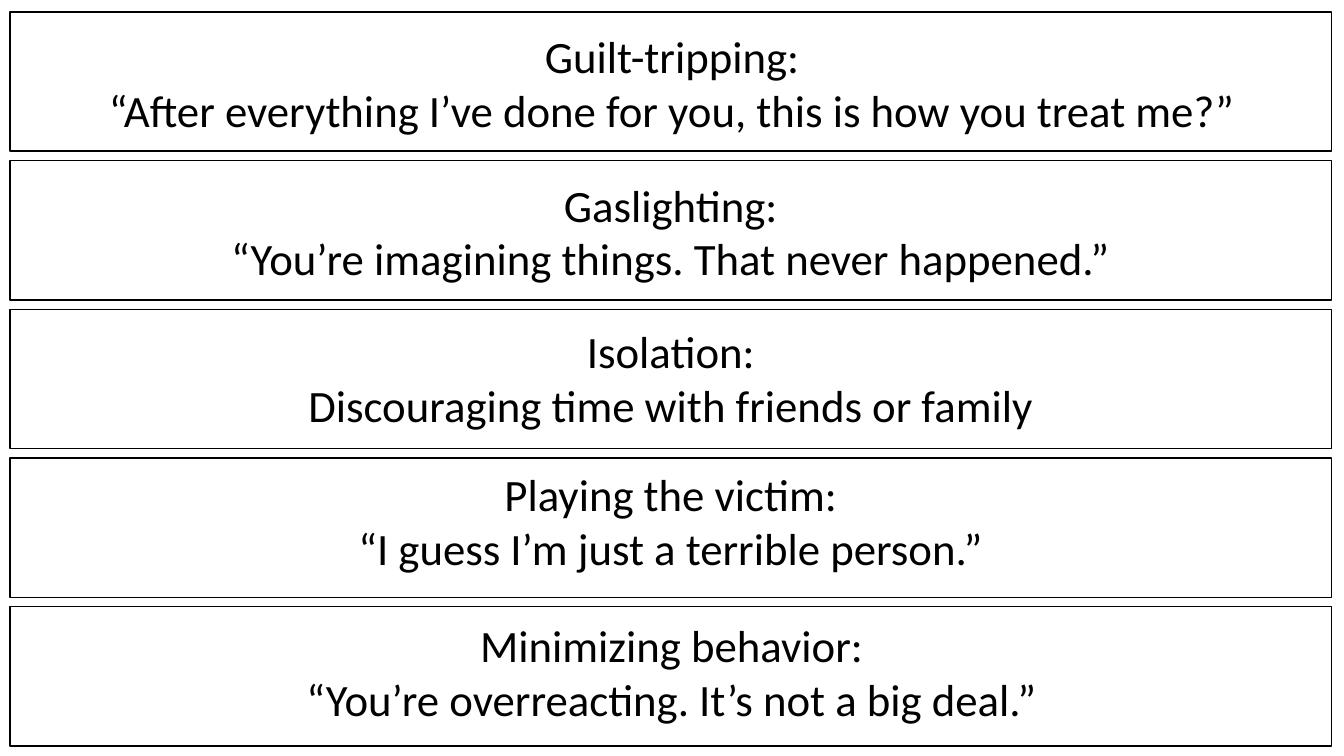
from dataclasses import dataclass

from pptx import Presentation
from pptx.dml.color import RGBColor
from pptx.enum.shapes import MSO_SHAPE
from pptx.enum.text import MSO_AUTO_SIZE, PP_ALIGN
from pptx.util import Pt


@dataclass(frozen=True)
class Theme:
    font: str = "Calibri"
    text_size: float = 32
    line_width: float = 1
    ink: RGBColor = RGBColor(0, 0, 0)
    paper: RGBColor = RGBColor(255, 255, 255)


class SlideBuilder:
    """Draw framed panels and centred text on one slide, in points."""

    def __init__(self, slide, theme):
        self.slide = slide
        self.theme = theme

    def panel(self, left, top, width, height):
        sp = self.slide.shapes.add_shape(
            MSO_SHAPE.RECTANGLE, Pt(left), Pt(top), Pt(width), Pt(height))
        sp.shadow.inherit = False
        sp.fill.solid()
        sp.fill.fore_color.rgb = self.theme.paper
        sp.line.color.rgb = self.theme.ink
        sp.line.width = Pt(self.theme.line_width)

    def text(self, left, top, width, height, lines):
        sp = self.slide.shapes.add_textbox(Pt(left), Pt(top), Pt(width), Pt(height))
        tf = sp.text_frame
        tf.word_wrap = True
        tf.auto_size = MSO_AUTO_SIZE.SHAPE_TO_FIT_TEXT
        tf.text = "\n".join(lines)
        for p in tf.paragraphs:
            p.alignment = PP_ALIGN.CENTER
            p.font.name = self.theme.font
            p.font.size = Pt(self.theme.text_size)
            p.font.color.rgb = self.theme.ink


SLIDE_W, SLIDE_H = 960, 540
PANEL_LEFT, PANEL_TOP = 7.2, 8.6
PANEL_W, PANEL_H, PANEL_PITCH = 944, 99.4, 106.2
TEXT_H = 85
TACTICS = [
    ("Guilt-tripping:",
     "“After everything I’ve done for you, this is how you treat me?”", 480.2, 17.3, 825),
    ("Gaslighting:",
     "“You’re imagining things. That never happened.”", 479.2, 123.1, 649),
    ("Isolation:",
     "Discouraging time with friends or family", 479.2, 227.5, 561),
    ("Playing the victim:",
     "“I guess I’m just a terrible person.”", 479.2, 329.8, 531),
    ("Minimizing behavior:",
     "“You’re overreacting. It’s not a big deal.”", 479.9, 437.8, 738),
]


def main():
    prs = Presentation()
    prs.slide_width, prs.slide_height = Pt(SLIDE_W), Pt(SLIDE_H)
    s = SlideBuilder(prs.slides.add_slide(prs.slide_layouts[6]), Theme())
    for i, (name, example, center, top, width) in enumerate(TACTICS):
        s.panel(PANEL_LEFT, PANEL_TOP + i * PANEL_PITCH, PANEL_W, PANEL_H)
        s.text(center - width / 2, top, width, TEXT_H, (name, example))
    prs.save("out.pptx")


if __name__ == "__main__":
    main()
